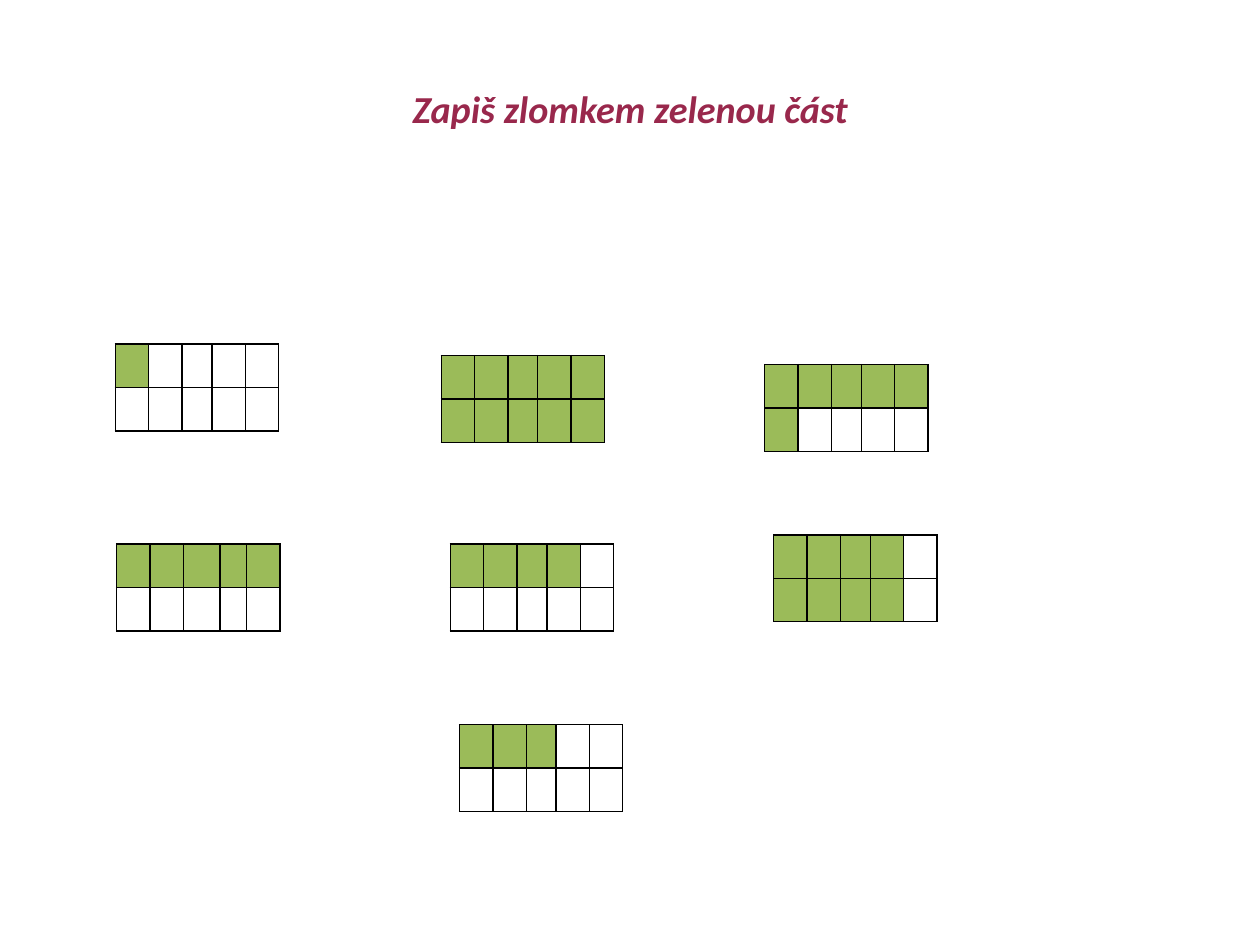
import pptx
import pptx.util
import pptx.dml.color
import pptx.enum.text
import pptx.oxml
import pptx.oxml.ns

Inches = pptx.util.Inches
Pt = pptx.util.Pt

COLOURS = {"title": "99284C", "shaded": "9BBB59", "blank": "FFFFFF", "border": "000000"}
TITLE_FONT = {"name": "Calibri", "size": Pt(24), "bold": True, "italic": True}
ZERO_MARGINS = dict.fromkeys(("margin_left", "margin_right", "margin_top", "margin_bottom"), 0)
PLAIN_TABLE = {"first_row": False, "horz_banding": False}
PAGE_SIZE = {"slide_width": pptx.util.Cm(28), "slide_height": pptx.util.Cm(21)}

TITLE_BOX = (0.81, 0.33, 9.41, 1.24)
GRID_WIDTH, GRID_HEIGHT = 1.43, 0.76

# Relative column widths
USUAL_COLUMNS = (29, 29, 26, 29, 29)
UNEVEN_COLUMNS = (29, 29, 32, 23, 29)

# Left, top, shaded cells in each row, column widths
FRACTIONS = [
    (1.01, 3.01, (1, 0), USUAL_COLUMNS),
    (1.02, 4.76, (5, 0), UNEVEN_COLUMNS),
    (3.94, 4.76, (4, 0), USUAL_COLUMNS),
    (6.77, 4.68, (4, 4), USUAL_COLUMNS),
    (3.86, 3.11, (5, 5), USUAL_COLUMNS),
    (6.69, 3.19, (5, 1), USUAL_COLUMNS),
    (4.02, 6.34, (3, 0), USUAL_COLUMNS),
]


def colour(name):
    return pptx.dml.color.RGBColor.from_string(COLOURS[name])


def apply_format(target, values):
    for name, value in values.items():
        setattr(target, name, value)


def add_title(page, box, text):
    title = page.shapes.title
    sides = map(Inches, box)
    apply_format(title, dict(zip(("left", "top", "width", "height"), sides)))
    frame = title.text_frame
    apply_format(frame, ZERO_MARGINS)
    frame.vertical_anchor = pptx.enum.text.MSO_ANCHOR.MIDDLE
    para = frame.paragraphs[0]
    para.alignment = pptx.enum.text.PP_ALIGN.CENTER
    span = para.add_run()
    span.text = text
    apply_format(span.font, TITLE_FONT)
    span.font.color.rgb = colour("title")


def add_borders(cell):
    properties = cell._tc.get_or_add_tcPr()
    namespace = pptx.oxml.ns.nsdecls("a")
    for position, side in enumerate(("lnL", "lnR", "lnT", "lnB")):
        line = pptx.oxml.parse_xml(
            f'<a:{side} {namespace} w="{Pt(1)}"><a:solidFill>'
            f'<a:srgbClr val="{COLOURS["border"]}"/></a:solidFill></a:{side}>')
        properties.insert(position, line)


def add_fraction(page, box, shaded_counts, column_shares):
    table = page.shapes.add_table(
        len(shaded_counts), len(column_shares), *map(Inches, box)).table
    apply_format(table, PLAIN_TABLE)
    for column, share in zip(table.columns, column_shares):
        column.width = Inches(box[2] * share / sum(column_shares))
    for row, shaded in zip(table.rows, shaded_counts):
        for index, cell in enumerate(row.cells):
            apply_format(cell, ZERO_MARGINS)
            cell.fill.solid()
            cell.fill.fore_color.rgb = colour("shaded" if index < shaded else "blank")
            add_borders(cell)


def main():
    deck = pptx.Presentation()
    apply_format(deck, PAGE_SIZE)
    page = deck.slides.add_slide(deck.slide_layouts.get_by_name("Title Only"))
    add_title(page, TITLE_BOX, "Zapiš zlomkem zelenou část")
    for left, top, shaded_counts, shares in FRACTIONS:
        add_fraction(page, (left, top, GRID_WIDTH, GRID_HEIGHT), shaded_counts, shares)
    deck.save("out.pptx")


if __name__ == "__main__":
    main()
